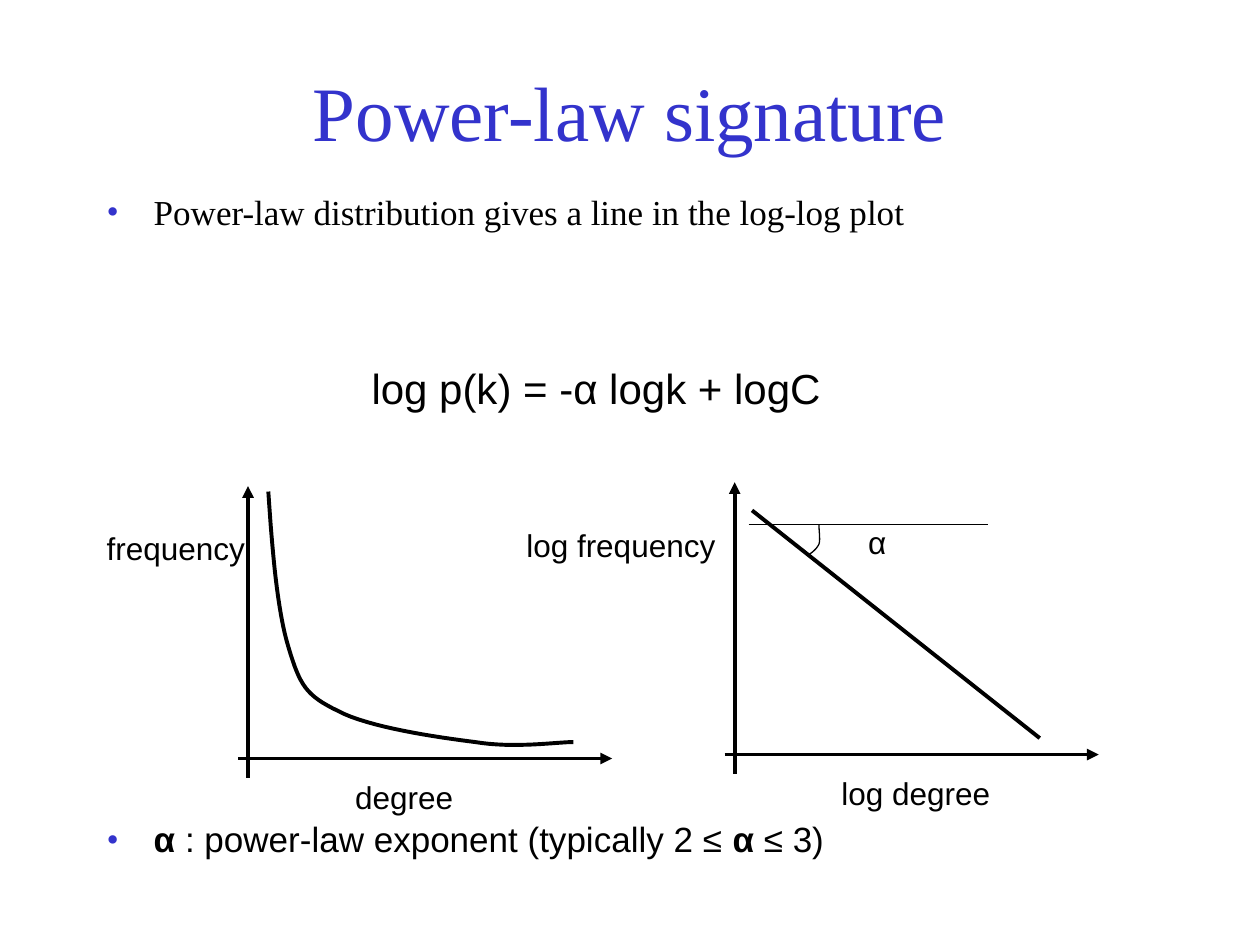
from lxml import etree
from pptx import Presentation
from pptx.dml.color import RGBColor
from pptx.enum.shapes import MSO_CONNECTOR
from pptx.enum.text import MSO_ANCHOR, MSO_AUTO_SIZE, PP_ALIGN
from pptx.oxml.ns import qn
from pptx.util import Cm, Pt

STRAIGHT = MSO_CONNECTOR.STRAIGHT
MIDDLE = MSO_ANCHOR.MIDDLE
CENTER = PP_ALIGN.CENTER
FIXED = MSO_AUTO_SIZE.NONE
GROW = MSO_AUTO_SIZE.SHAPE_TO_FIT_TEXT
BLACK = RGBColor(0x00, 0x00, 0x00)
BLUE = RGBColor(0x33, 0x33, 0xCC)
STEPS = 16  # points per curve segment

deck = Presentation()
deck.slide_width, deck.slide_height = Cm(25.4), Cm(19.05)
page = deck.slides.add_slide(deck.slide_layouts[6])


def add_line(x1, y1, x2, y2, width, arrow=False):
    line = page.shapes.add_connector(STRAIGHT, Cm(x1), Cm(y1), Cm(x2), Cm(y2))
    line.line.color.rgb = BLACK
    line.line.width = Pt(width)
    if arrow:
        etree.SubElement(line.line._get_or_add_ln(), qn("a:tailEnd"), type="triangle")
    etree.SubElement(line._element.spPr, qn("a:effectLst"))


def add_text(text, x, y, width, height, size, font="Arial", color=BLACK, wrap=False):
    box = page.shapes.add_textbox(Cm(x), Cm(y), Cm(width), Cm(height))
    box.text_frame.word_wrap = wrap
    box.text_frame.auto_size = FIXED if wrap else GROW
    para = box.text_frame.paragraphs[0]
    para.text = text
    para.font.size, para.font.name, para.font.color.rgb = Pt(size), font, color
    return box.text_frame


# Title
title = add_text("Power-law signature", 1.9, 0.64, 21.6, 3.18, 44,
                 "Times New Roman", BLUE, wrap=True)
title.vertical_anchor = MIDDLE
title.paragraphs[0].alignment = CENTER

# Bulleted body: one line above the plots, one below
body = add_text("Power-law distribution gives a line in the log-log plot",
                1.9, 3.81, 22.86, 14.07, 20, "Times New Roman", wrap=True)
exponent = body.add_paragraph()
exponent.font.size, exponent.font.name, exponent.font.color.rgb = Pt(20), "Arial", BLACK
for text, bold in [("α", True), (" : power-law exponent (typically 2 ≤ ", False),
                   ("α ", True), ("≤ 3)", False)]:
    span = exponent.add_run()
    span.text = text
    span.font.bold = bold
for para, gap in zip(body.paragraphs, (4, 337)):
    para.line_spacing = 0.9
    para.space_before = Pt(gap)
    props = para._p.get_or_add_pPr()
    props.set("marL", str(Cm(0.95)))
    props.set("indent", str(-Cm(0.95)))
    defaults = props.find(qn("a:defRPr"))
    bullet_color = etree.Element(qn("a:buClr"))
    etree.SubElement(bullet_color, qn("a:srgbClr"), val=str(BLUE))
    defaults.addprevious(bullet_color)
    defaults.addprevious(etree.Element(qn("a:buFont"), typeface="Times New Roman"))
    defaults.addprevious(etree.Element(qn("a:buChar"), char="•"))

# Axes of both plots, from their origins
for x, y in [(5.0, 15.29), (14.81, 15.21)]:
    add_line(x, y + 0.39, x, y - 5.49, 2.25, arrow=True)
    add_line(x - 0.2, y, x + 7.34, y, 2.25, arrow=True)

# Falling line and its horizontal reference
add_line(15.16, 10.29, 20.96, 14.88, 2.25)
add_line(15.09, 10.57, 19.91, 10.57, 0.75)

# Power-law curve and angle arc: Bezier control points, three per segment
power_curve = [(5.41, 9.91), (5.49, 11.1), (5.59, 12.32), (5.82, 13.06),
               (6.05, 13.82), (6.17, 14.02), (6.81, 14.33),
               (7.42, 14.66), (8.79, 14.86), (9.58, 14.96),
               (10.36, 15.09), (11.23, 14.96), (11.56, 14.96)]
angle_arc = [(16.51, 10.57), (16.51, 10.72), (16.54, 10.87), (16.51, 10.97),
             (16.46, 11.07), (16.38, 11.13), (16.31, 11.18)]
for controls, width in [(power_curve, 2.25), (angle_arc, 0.75)]:
    points = []
    for first in range(0, len(controls) - 1, 3):
        segment = controls[first:first + 4]
        for step in range(1, STEPS + 1):
            t = step / STEPS
            weights = ((1 - t) ** 3, 3 * t * (1 - t) ** 2, 3 * t * t * (1 - t), t ** 3)
            points.append(tuple(Cm(sum(w * p[axis] for w, p in zip(weights, segment)))
                                for axis in (0, 1)))
    builder = page.shapes.build_freeform(Cm(controls[0][0]), Cm(controls[0][1]))
    builder.add_line_segments(points, close=False)
    curve = builder.convert_to_shape()
    curve.shadow.inherit = False
    curve.fill.background()
    curve.line.color.rgb = BLACK
    curve.line.width = Pt(width)

# Plot labels
for text, x, y, width in [("frequency", 1.9, 10.54, 3.3), ("degree", 6.91, 15.55, 2.49),
                          ("log frequency", 10.36, 10.48, 4.32),
                          ("log degree", 16.71, 15.47, 3.53), ("α", 17.25, 10.41, 0.89)]:
    add_text(text, x, y, width, 1.02, 18)

# Formula
add_text("log p(k) = -α logk + logC", 7.24, 7.19, 9.6, 1.27, 24)

deck.save("out.pptx")
